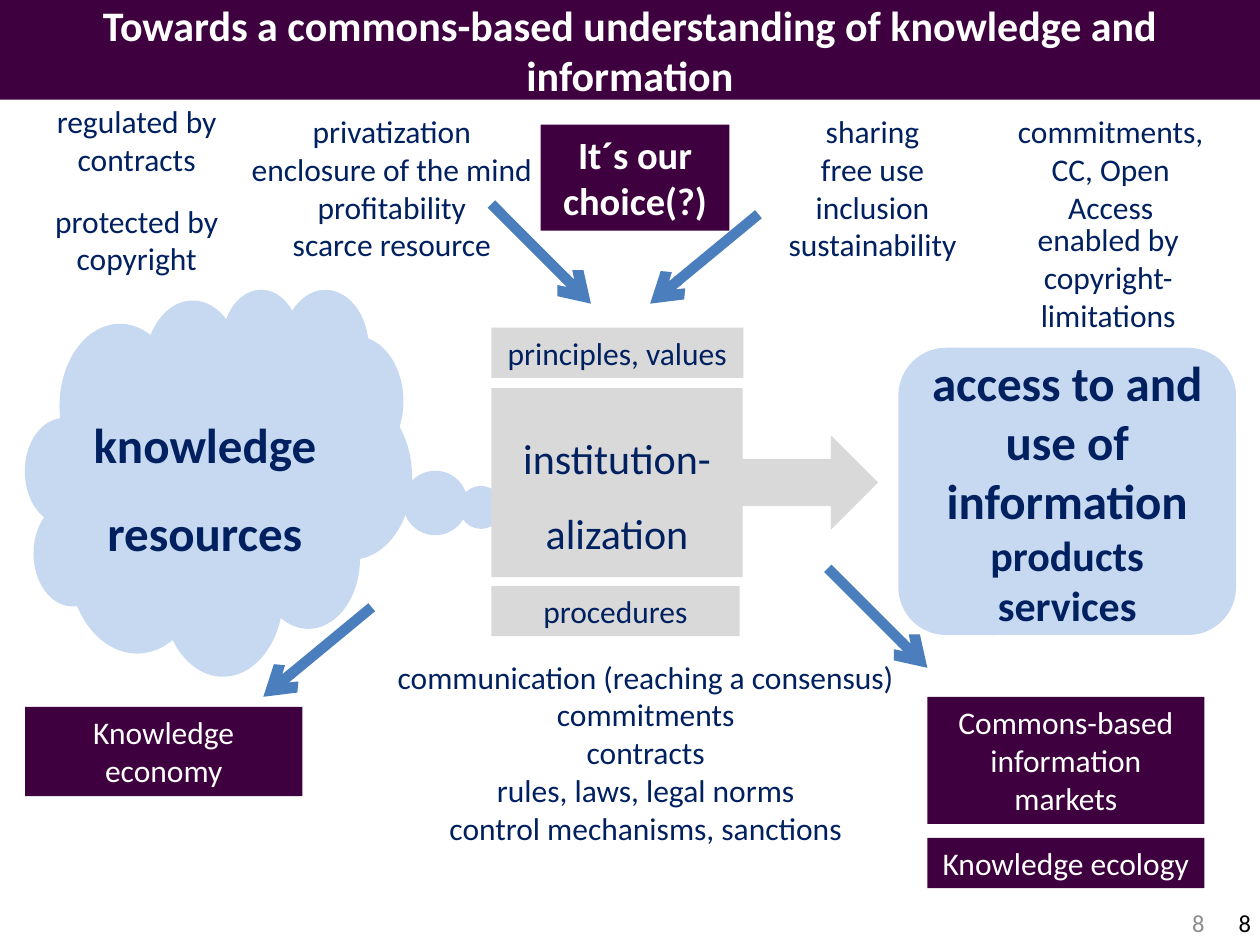
from dataclasses import dataclass

import pptx
import pptx.dml.color
import pptx.enum.shapes
import pptx.enum.text
import pptx.oxml
import pptx.oxml.ns
import pptx.util

Inches = pptx.util.Inches
RGB = pptx.dml.color.RGBColor
Shape = pptx.enum.shapes.MSO_SHAPE
Anchor = pptx.enum.text.MSO_ANCHOR
Align = pptx.enum.text.PP_ALIGN
Fit = pptx.enum.text.MSO_AUTO_SIZE

PLUM = RGB(0x3E, 0x00, 0x3E)
NAVY = RGB(0x00, 0x20, 0x60)
SKY = RGB(0xC6, 0xD9, 0xF1)
SILVER = RGB(0xD9, 0xD9, 0xD9)
BLUE = RGB(0x4B, 0x7E, 0xBC)
GRAY = RGB(0x8C, 0x8C, 0x8C)
WHITE = RGB(0xFF, 0xFF, 0xFF)
BLACK = RGB(0x00, 0x00, 0x00)
FONT = "Calibri"


@dataclass
class Block:
    """A filled shape with its text."""
    box: tuple
    text: str
    fill: RGB
    color: RGB = NAVY
    size: int = 18
    bold: bool = False
    kind: Shape = Shape.RECTANGLE
    space: float = 1.0
    grow: bool = True


@dataclass
class Note:
    """Free text without a fill."""
    box: tuple
    text: str


@dataclass
class Arrow:
    start: tuple
    end: tuple


def write(frame, text: str, size: int = 18, color: RGB = NAVY, bold: bool = False,
          align: Align = Align.CENTER, space: float = 1.0) -> None:
    """Continue the last paragraph; each newline starts another."""
    for i, line in enumerate(text.split("\n")):
        para = frame.add_paragraph() if i else frame.paragraphs[-1]
        para.alignment = align
        para.line_spacing = space
        run = para.add_run()
        run.text = line
        run.font.name = FONT
        run.font.size = pptx.util.Pt(size)
        run.font.bold = bold
        run.font.color.rgb = color


def clear(frame) -> None:
    """Remove the inner margins."""
    frame.margin_left = frame.margin_right = 0
    frame.margin_top = frame.margin_bottom = 0


def draw_block(slide, item: Block):
    shape = slide.shapes.add_shape(item.kind, *map(Inches, item.box))
    shape.shadow.inherit = False
    shape.fill.solid()
    shape.fill.fore_color.rgb = item.fill
    shape.line.fill.background()
    frame = shape.text_frame
    frame.word_wrap = True
    frame.vertical_anchor = Anchor.TOP if item.grow else Anchor.MIDDLE
    if item.grow:
        frame.auto_size = Fit.SHAPE_TO_FIT_TEXT
    write(frame, item.text, size=item.size, color=item.color, bold=item.bold,
          space=item.space)
    return shape


def draw_note(slide, item: Note, **style):
    box = slide.shapes.add_textbox(*map(Inches, item.box))
    box.text_frame.word_wrap = True
    box.text_frame.auto_size = Fit.NONE if style else Fit.SHAPE_TO_FIT_TEXT
    write(box.text_frame, item.text, **style)
    return box


def draw_arrow(slide, item: Arrow) -> None:
    line = slide.shapes.add_connector(
        pptx.enum.shapes.MSO_CONNECTOR.STRAIGHT,
        *map(Inches, item.start + item.end))
    line.line.color.rgb = BLUE
    line.line.width = pptx.util.Pt(6)
    stroke = line.line._get_or_add_ln()
    tail = pptx.oxml.parse_xml(
        f'<a:tailEnd {pptx.oxml.ns.nsdecls("a")} type="arrow"/>')
    stroke.append(tail)
    stroke.addnext(pptx.oxml.parse_xml(
        f'<a:effectLst {pptx.oxml.ns.nsdecls("a")}/>'))


TITLE = Block((0, 0, 10, 0.79),
              "Towards a commons-based understanding of knowledge and information",
              PLUM, WHITE, 24, True, grow=False)
CLOUD = Block((0.2, 2.29, 3.07, 3.07), "knowledge resources", SKY, size=28,
              bold=True, kind=Shape.CLOUD_CALLOUT, space=1.5, grow=False)
ACCESS = Block((7.13, 2.76, 2.68, 2.28), "access to and use of information", SKY,
               size=28, bold=True, kind=Shape.ROUNDED_RECTANGLE, grow=False)

BLOCKS = [
    Block((3.9, 3.08, 3.07, 1.5), "institution-alization", SILVER, size=24,
          kind=Shape.RIGHT_ARROW_CALLOUT, space=1.5, grow=False),
    Block((3.9, 2.6, 2, 0.4), "principles, values", SILVER),
    Block((3.9, 4.65, 1.97, 0.4), "procedures", SILVER),
    Block((4.29, 0.99, 1.5, 0.84), "It´s our choice(?)", PLUM, WHITE, 22, True),
    Block((0.2, 5.61, 2.2, 0.71), "Knowledge economy", PLUM, WHITE),
    Block((7.36, 5.53, 2.2, 1.01), "Commons-based information markets", PLUM, WHITE),
    Block((7.36, 6.65, 2.2, 0.4), "Knowledge ecology", PLUM, WHITE),
]
NOTES = [
    Note((5.94, 0.84, 1.97, 1.31), "sharing\nfree use\ninclusion\nsustainability"),
    Note((1.77, 0.84, 2.68, 1.31),
         "privatization\nenclosure of the mind\nprofitability\nscarce resource"),
    Note((2.8, 5.17, 4.65, 1.62),
         "communication (reaching a consensus)\ncommitments\ncontracts\n"
         "rules, laws, legal norms\ncontrol mechanisms, sanctions"),
    Note((0.28, 0.76, 1.61, 0.71), "regulated by contracts"),
    Note((0.28, 1.55, 1.61, 0.71), "protected by copyright"),
    Note((7.99, 1.7, 1.61, 1.01), "enabled by copyright-limitations"),
    Note((7.91, 0.84, 1.81, 1.01), "commitments, CC, Open Access"),
]
ARROWS = [
    Arrow((6.02, 1.7), (5.16, 2.41)),
    Arrow((3.9, 1.62), (4.69, 2.41)),
    Arrow((2.95, 4.82), (2.09, 5.53)),
    Arrow((6.57, 4.51), (7.36, 5.3)),
]


def main() -> None:
    deck = pptx.Presentation()
    deck.slide_width, deck.slide_height = Inches(10), Inches(7.5)
    slide = deck.slides.add_slide(deck.slide_layouts[6])

    # Page numbers
    page = draw_note(slide, Note((7.33, 7.12, 2.33, 0.4), "8"),
                     size=14, color=GRAY, align=Align.RIGHT)
    page.text_frame.vertical_anchor = Anchor.MIDDLE
    page = draw_note(slide, Note((9.25, 7.21, 0.68, 0.24), "8"),
                     size=14, color=BLACK, align=Align.RIGHT)
    clear(page.text_frame)

    # Title, source and outcome
    clear(draw_block(slide, TITLE).text_frame)
    cloud = draw_block(slide, CLOUD)
    cloud.adjustments[0], cloud.adjustments[1] = 0.741, 0.072
    goal = draw_block(slide, ACCESS)
    write(goal.text_frame, " products\nservices", size=24, bold=True)

    # Process, choices and effects
    for item in BLOCKS:
        draw_block(slide, item)
    for item in NOTES:
        draw_note(slide, item)
    for item in ARROWS:
        draw_arrow(slide, item)

    deck.save("out.pptx")


if __name__ == "__main__":
    main()
